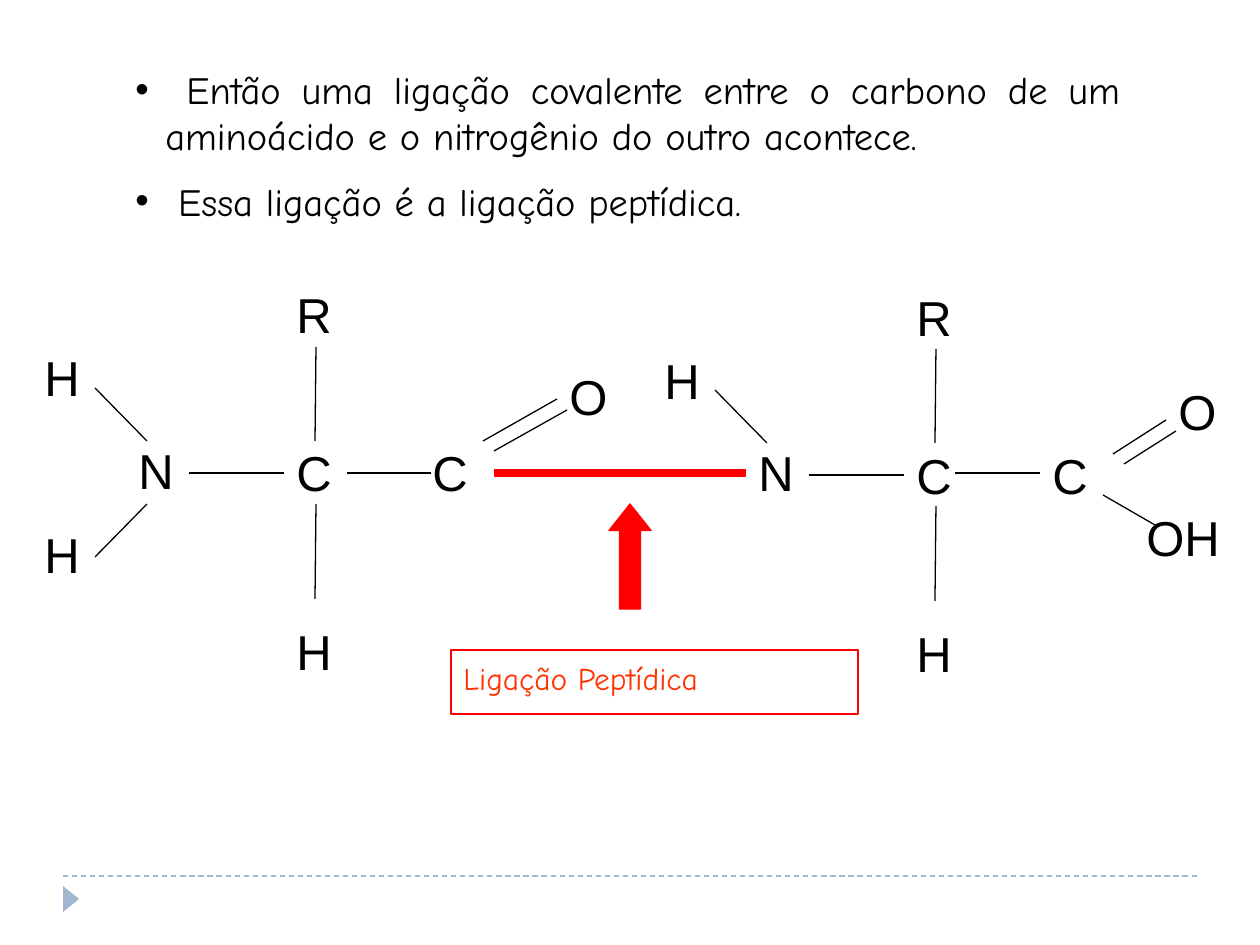
from lxml import etree
from pptx import Presentation
from pptx import util as u
from pptx.dml.color import RGBColor
from pptx.enum import dml, shapes, text
from pptx.oxml.ns import qn

PX = u.Inches(1) / 126
COLORS = {"ink": "000000", "bond": "FF0000", "caption": "FF3300", "footer": "9FB8CD"}
ATOM_SIZE = (73, 72)
RESIDUE_SHIFT = (620, 2)

# First amino acid; the second one repeats it at RESIDUE_SHIFT.
RESIDUE_ATOMS = [
    ("N", 126, 428), ("H", 284, 609), ("R", 284, 273), ("C", 284, 431),
    ("H", 32, 336), ("C", 420, 431),
]
RESIDUE_BONDS = [
    (189, 473, 284, 473), (315, 441, 316, 347),
    (315, 599, 316, 504), (95, 388, 147, 441),
]
END_ATOMS = [("H", 32, 513), ("O", 557, 355), ("O", 1166, 369)]
END_BONDS = [
    (95, 557, 147, 504), (347, 473, 431, 473), (955, 473, 1040, 473),
    (494, 451, 567, 410), (483, 441, 557, 399),
    (1113, 454, 1166, 420), (1124, 464, 1176, 431), (1103, 495, 1155, 525),
]
STATEMENTS = [
    " Então uma ligação covalente entre o carbono de um aminoácido "
    "e o nitrogênio do outro acontece.",
    " Essa ligação é a ligação peptídica.",
]


def px(*lengths):
    return [u.Emu(round(length * PX)) for length in lengths]


def rgb(name):
    return RGBColor.from_string(COLORS[name])


def style_font(paragraph, face, size, color):
    paragraph.font.name = face
    paragraph.font.size = u.Pt(size)
    paragraph.font.color.rgb = rgb(color)


def add_line(slide, ends, color="ink", width=0.75, dashed=False):
    line = slide.shapes.add_connector(shapes.MSO_CONNECTOR.STRAIGHT, *px(*ends))
    line.line.color.rgb = rgb(color)
    line.line.width = u.Pt(width)
    if dashed:
        line.line.dash_style = dml.MSO_LINE.DASH
    etree.SubElement(line._element.spPr, qn("a:effectLst"))


def add_shape(slide, preset, box, fill=None, outline=None):
    shape = slide.shapes.add_shape(preset, *px(*box))
    shape.shadow.inherit = False
    if fill:
        shape.fill.solid()
        shape.fill.fore_color.rgb = rgb(fill)
    else:
        shape.fill.background()
    if outline:
        shape.line.color.rgb = rgb(outline)
        shape.line.width = u.Pt(0.75)
    else:
        shape.line.fill.background()
    return shape


def add_atom(slide, symbol, left, top, width=ATOM_SIZE[0]):
    frame = slide.shapes.add_textbox(*px(left, top, width, ATOM_SIZE[1])).text_frame
    frame.word_wrap = True
    frame.margin_top, frame.margin_bottom = px(12, 0)
    frame.text = symbol
    style_font(frame.paragraphs[0], "Arial", 28, "ink")


def add_residue(slide, dx, dy):
    for symbol, left, top in RESIDUE_ATOMS:
        add_atom(slide, symbol, left + dx, top + dy)
    for x1, y1, x2, y2 in RESIDUE_BONDS:
        add_line(slide, (x1 + dx, y1 + dy, x2 + dx, y2 + dy))


def add_bullet(paragraph, indent):
    properties = paragraph._p.get_or_add_pPr()
    properties.set("marL", str(indent))
    properties.set("indent", str(-indent))
    etree.SubElement(properties, qn("a:buFont")).set("typeface", "Arial")
    etree.SubElement(properties, qn("a:buChar")).set("char", "•")


def add_statements(slide):
    frame = slide.shapes.add_textbox(*px(123, 57, 1010, 174)).text_frame
    frame.word_wrap = True
    frame.margin_top = px(9)[0]
    for index, statement in enumerate(STATEMENTS):
        paragraph = frame.add_paragraph() if index else frame.paragraphs[0]
        paragraph.text = statement
        paragraph.alignment = text.PP_ALIGN.JUSTIFY
        if index:
            paragraph.space_before = u.Pt(11)
        add_bullet(paragraph, px(30)[0])
        style_font(paragraph, "Comic Neue", 22, "ink")


def add_peptide_bond(slide):
    add_line(slide, (494, 473, 746, 473), "bond", 5)
    caption = add_shape(slide, shapes.MSO_SHAPE.RECTANGLE, (451, 650, 407, 64),
                        outline="bond")
    frame = caption.text_frame
    frame.word_wrap = True
    frame.vertical_anchor = text.MSO_ANCHOR.TOP
    frame.margin_top = px(9)[0]
    frame.text = "Ligação Peptídica"
    frame.paragraphs[0].alignment = text.PP_ALIGN.LEFT
    style_font(frame.paragraphs[0], "Comic Neue", 18, "caption")
    arrow = add_shape(slide, shapes.MSO_SHAPE.UP_ARROW, (609, 504, 42, 105),
                      "bond", "bond")
    arrow.adjustments[0] = 0.5
    arrow.adjustments[1] = 0.63


def add_footer(slide):
    add_line(slide, (63, 876, 1197, 876), "footer", dashed=True)
    marker = add_shape(slide, shapes.MSO_SHAPE.ISOSCELES_TRIANGLE,
                       (58, 891, 26, 16), "footer")
    marker.rotation = 90


def main():
    deck = Presentation()
    deck.slide_width, deck.slide_height = px(1260, 945)
    slide = deck.slides.add_slide(deck.slide_layouts[6])
    add_footer(slide)
    for shift in ((0, 0), RESIDUE_SHIFT):
        add_residue(slide, *shift)
    for atom in END_ATOMS:
        add_atom(slide, *atom)
    add_atom(slide, "OH", 1134, 495, 126)
    for bond in END_BONDS:
        add_line(slide, bond)
    add_peptide_bond(slide)
    add_statements(slide)
    deck.save("out.pptx")


if __name__ == "__main__":
    main()
